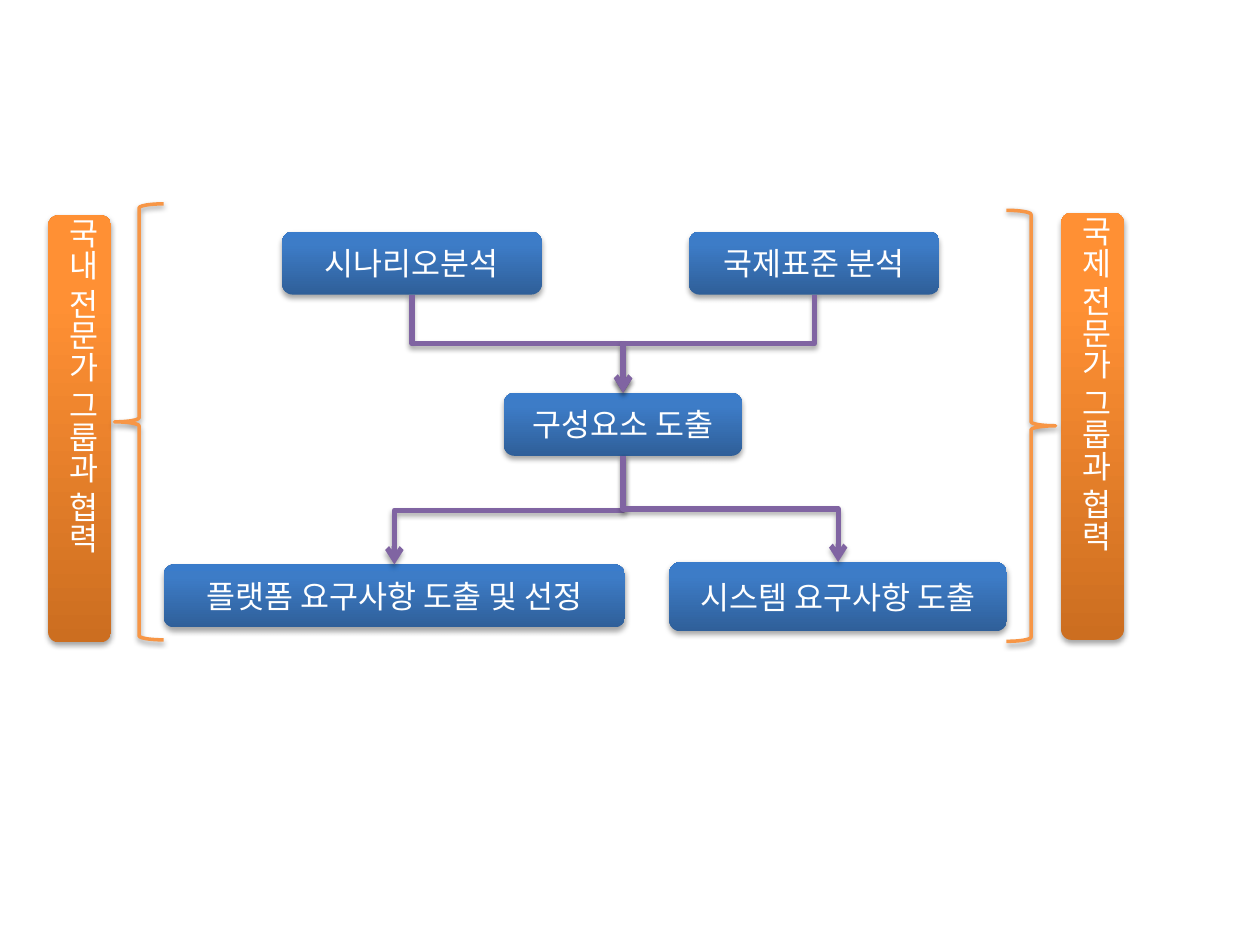
import pptx
import pptx.util
import pptx.dml.color
import pptx.enum.shapes
import pptx.enum.text
import pptx.oxml.ns
from lxml import etree

Cm, Pt = pptx.util.Cm, pptx.util.Pt
MSO = pptx.enum.shapes.MSO_SHAPE
qn = pptx.oxml.ns.qn

FONT = "Noto Sans CJK KR"
HUES = {"text": "FFFFFF", "arrow": "8064A2", "brace": "F79646", "shade": "000000"}
# Gradient stops as percent and colour, from the bottom up
FADES = {
    "blue": {0: "2F5F99", 80: "3D7CC7", 100: "3A7CCB"},
    "orange": {0: "CC6E20", 80: "FF9034", 100: "FF9136"},
}


def rgb(name):
    return pptx.dml.color.RGBColor.from_string(HUES[name])


def add_shade(item, alpha=35, dist=1.8):
    """Soft shadow straight below the item."""
    props = item._element.spPr
    for old in props.findall(qn("a:effectLst")):
        props.remove(old)
    group = etree.SubElement(props, qn("a:effectLst"))
    shade = etree.SubElement(group, qn("a:outerShdw"), blurRad=str(Pt(3.1)),
                             dist=str(Pt(dist)), dir="5400000", rotWithShape="0")
    tint = etree.SubElement(shade, qn("a:srgbClr"), val=HUES["shade"])
    etree.SubElement(tint, qn("a:alpha"), val=str(alpha * 1000))


def add_fade(shape, fade):
    shape.fill.gradient()
    shape.fill.gradient_angle = 90
    stops = shape._element.spPr.find(".//" + qn("a:gsLst"))
    for old in list(stops):
        stops.remove(old)
    for place, tone in FADES[fade].items():
        stop = etree.SubElement(stops, qn("a:gs"), pos=str(place * 1000))
        etree.SubElement(stop, qn("a:srgbClr"), val=tone)


def add_block(slide, text, fade, x, y, w, h):
    shape = slide.shapes.add_shape(MSO.ROUNDED_RECTANGLE, Cm(x), Cm(y), Cm(w), Cm(h))
    add_fade(shape, fade)
    shape.line.fill.background()
    add_shade(shape)
    frame = shape.text_frame
    frame.word_wrap = True
    frame.vertical_anchor = pptx.enum.text.MSO_ANCHOR.MIDDLE
    frame.text = text
    line = frame.paragraphs[0]
    line.alignment = pptx.enum.text.PP_ALIGN.CENTER
    font = line.runs[0].font
    font.name, font.size, font.color.rgb = FONT, Pt(18), rgb("text")
    etree.SubElement(font._element, qn("a:ea"), typeface=FONT)
    return shape


def add_bend(slide, top, low):
    """Elbow arrow from the bottom of one block to the top of another."""
    x1, y1 = top.left + top.width // 2, top.top + top.height
    x2, y2 = low.left + low.width // 2, low.top
    # A turned elbow: its unturned frame has width and height swapped
    w, h = y2 - y1, abs(x2 - x1)
    x, y = (x1 + x2 - w) // 2, (y1 + y2 - h) // 2
    bend = slide.shapes.add_connector(
        pptx.enum.shapes.MSO_CONNECTOR.ELBOW, x, y, x + w, y + h)
    frame = bend._element.spPr.find(qn("a:xfrm"))
    if x2 > x1:
        frame.set("rot", str(270 * 60000))
        frame.set("flipH", "1")
    else:
        frame.set("rot", str(90 * 60000))
    bend.line.color.rgb = rgb("arrow")
    bend.line.width = Pt(3)
    etree.SubElement(bend.line._get_or_add_ln(), qn("a:tailEnd"), type="arrow")
    add_shade(bend)


def add_flow(slide, x, y):
    """Blocks of the process and the arrows between them."""
    def place(text, dx, dy, w, h=1.27):
        return add_block(slide, text, "blue", x + dx, y + dy, w, h)

    case = place("시나리오분석", 2.39, 0, 5.23)
    core = place("구성요소 도출", 6.86, 3.25, 4.8)
    norm = place("국제표준 분석", 10.59, 0, 5.05)
    base = place("플랫폼 요구사항 도출 및 선정", 0, 6.71, 9.3)
    system = place("시스템 요구사항 도출", 10.19, 6.66, 6.81, 1.4)
    for top, low in ((case, core), (norm, core), (core, base), (core, system)):
        add_bend(slide, top, low)


def add_side(slide, text, kind, bar, brace):
    """Upright bar with its brace; each box is x, y, width, height."""
    block = add_block(slide, text, "orange", *bar)
    frame = block.text_frame
    frame.margin_left, frame.margin_right = Cm(0.4), Cm(0.25)
    frame.margin_top = frame.margin_bottom = 0
    frame._txBody.bodyPr.set("vert", "eaVert")

    curve = slide.shapes.add_shape(kind, *map(Cm, brace))
    curve.fill.background()
    curve.line.color.rgb = rgb("brace")
    curve.line.width = Pt(2)
    add_shade(curve, 38, 1.6)


def main():
    deck = pptx.Presentation()
    deck.slide_width, deck.slide_height = Cm(25.4), Cm(19.05)
    slide = deck.slides.add_slide(deck.slide_layouts[6])
    add_flow(slide, 3.3, 4.67)
    add_side(slide, "국내 전문가 그룹과 협력", MSO.LEFT_BRACE,
             (0.97, 4.34, 1.27, 8.61), (2.31, 4.11, 0.99, 8.79))
    add_side(slide, "국제 전문가 그룹과 협력 ", MSO.RIGHT_BRACE,
             (21.39, 4.29, 1.27, 8.61), (20.29, 4.24, 0.99, 8.69))
    deck.save("out.pptx")


if __name__ == "__main__":
    main()
